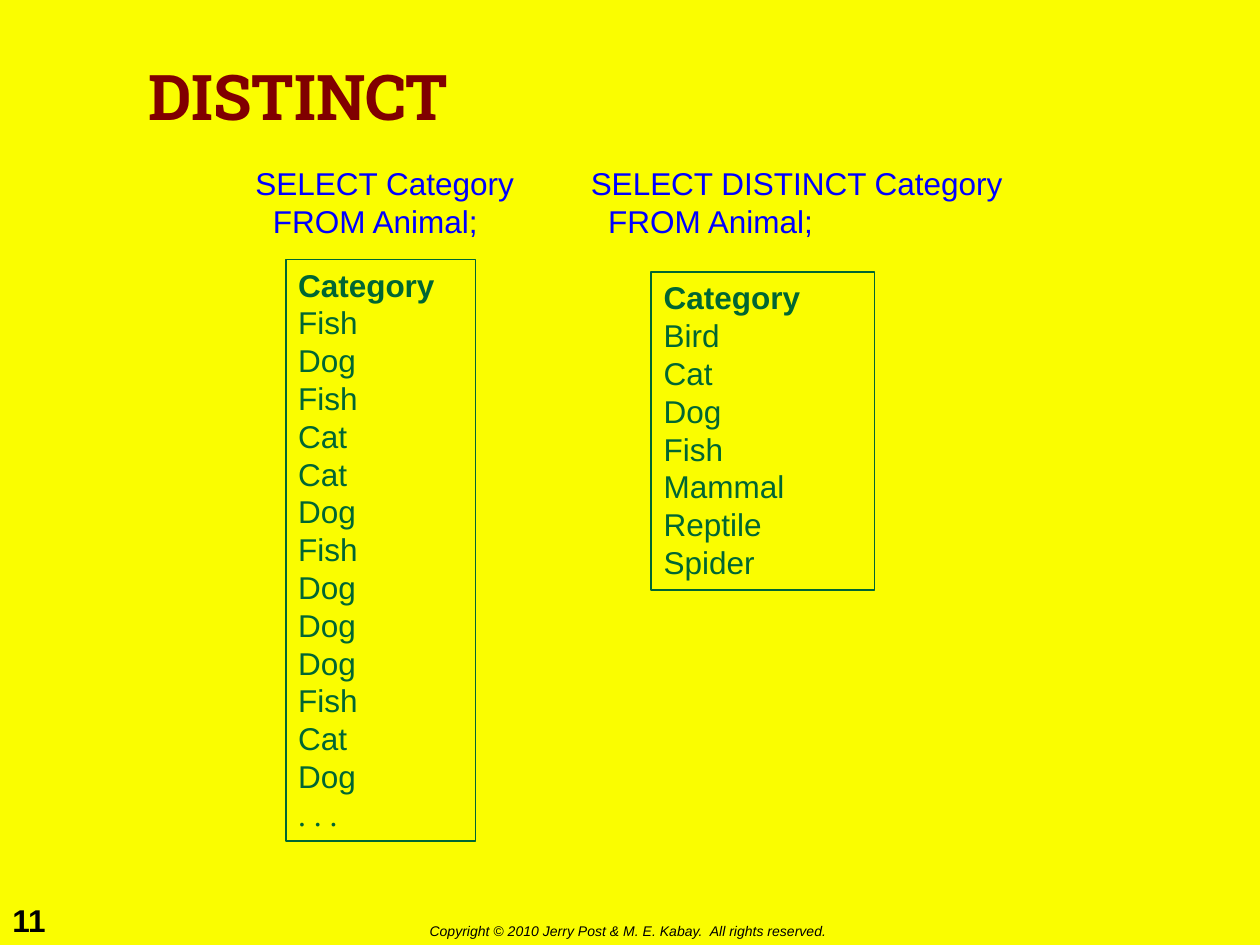
from dataclasses import dataclass

import pptx
import pptx.dml.color
import pptx.enum.shapes
import pptx.enum.text
import pptx.util
from pptx.util import Cm


@dataclass(frozen=True)
class Theme:
    background: str = "FAFD00"
    title: str = "800000"
    query: str = "0000FF"
    result: str = "006633"
    footer: str = "000000"
    title_font: str = "Roboto Slab"
    body_font: str = "Arial"
    ellipsis_font: str = "Times New Roman"
    title_size: int = 36
    body_size: int = 18
    footer_size: int = 8
    border_width: int = 1


@dataclass(frozen=True)
class Frame:
    left: float
    top: float
    width: float
    height: float

    def lengths(self) -> tuple:
        return Cm(self.left), Cm(self.top), Cm(self.width), Cm(self.height)


@dataclass(frozen=True)
class Style:
    font: str
    size: int
    color: str
    bold: bool = False
    italic: bool = False


@dataclass(frozen=True)
class Example:
    query: list[str]
    query_frame: Frame
    rows: list[str]
    result_frame: Frame


THEME = Theme()
ELLIPSIS = ". . ."
TITLE = Style(THEME.title_font, THEME.title_size, THEME.title, bold=True)
NUMBER = Style(THEME.body_font, THEME.body_size, THEME.footer, bold=True)
COPYRIGHT = Style(THEME.body_font, THEME.footer_size, THEME.footer, italic=True)
QUERY = Style(THEME.body_font, THEME.body_size, THEME.query)
HEADER = Style(THEME.body_font, THEME.body_size, THEME.result, bold=True)
ROW = Style(THEME.body_font, THEME.body_size, THEME.result)
MORE = Style(THEME.ellipsis_font, THEME.body_size, THEME.result)

EXAMPLES = [
    Example(
        ["SELECT Category", "  FROM Animal;"],
        Frame(4.9, 3.18, 5.74, 1.78),
        ["Fish", "Dog", "Fish", "Cat", "Cat", "Dog", "Fish", "Dog",
         "Dog", "Dog", "Fish", "Cat", "Dog", ELLIPSIS],
        Frame(5.76, 5.23, 3.83, 11.73),
    ),
    Example(
        ["SELECT DISTINCT Category", "  FROM Animal;"],
        Frame(11.66, 3.18, 8.84, 1.78),
        ["Bird", "Cat", "Dog", "Fish", "Mammal", "Reptile", "Spider"],
        Frame(13.13, 5.49, 4.5, 6.4),
    ),
]


def rgb(color: str) -> pptx.dml.color.RGBColor:
    return pptx.dml.color.RGBColor.from_string(color)


def write(box, lines: list[tuple[str, Style]], wrap: bool = False,
          anchor=pptx.enum.text.MSO_ANCHOR.TOP) -> None:
    frame = box.text_frame
    frame.word_wrap = wrap
    frame.vertical_anchor = anchor
    for index, (text, style) in enumerate(lines):
        para = frame.paragraphs[0] if index == 0 else frame.add_paragraph()
        para.text = text
        para.alignment = pptx.enum.text.PP_ALIGN.LEFT
        para.font.name = style.font
        para.font.size = pptx.util.Pt(style.size)
        para.font.bold = style.bold
        para.font.italic = style.italic
        para.font.color.rgb = rgb(style.color)


def add_label(slide, frame: Frame, lines: list[str], style: Style) -> None:
    box = slide.shapes.add_textbox(*frame.lengths())
    write(box, [(line, style) for line in lines])


def add_title(slide, text: str) -> None:
    box = slide.shapes.add_textbox(*Frame(2.74, 0.43, 19.89, 3.18).lengths())
    write(box, [(text, TITLE)], wrap=True, anchor=pptx.enum.text.MSO_ANCHOR.MIDDLE)
    box.text_frame.paragraphs[0].line_spacing = 0.9


def add_result(slide, frame: Frame, rows: list[str]) -> None:
    box = slide.shapes.add_shape(
        pptx.enum.shapes.MSO_SHAPE.RECTANGLE, *frame.lengths())
    box.shadow.inherit = False
    box.fill.background()
    box.line.color.rgb = rgb(THEME.result)
    box.line.width = pptx.util.Pt(THEME.border_width)
    body = [(row, MORE if row == ELLIPSIS else ROW) for row in rows]
    write(box, [("Category", HEADER), *body], wrap=True)


def main() -> None:
    deck = pptx.Presentation()
    deck.slide_width, deck.slide_height = Cm(25.4), Cm(19.05)
    slide = deck.slides.add_slide(deck.slide_layouts[6])
    slide.background.fill.solid()
    slide.background.fill.fore_color.rgb = rgb(THEME.background)

    add_label(slide, Frame(0, 18.03, 1.27, 1.02), ["11"], NUMBER)
    add_label(slide, Frame(8.41, 18.47, 8.79, 0.61),
              ["Copyright © 2010 Jerry Post & M. E. Kabay.  All rights reserved."],
              COPYRIGHT)
    add_title(slide, "DISTINCT")
    for example in EXAMPLES:
        add_label(slide, example.query_frame, example.query, QUERY)
        add_result(slide, example.result_frame, example.rows)
    deck.save("out.pptx")


if __name__ == "__main__":
    main()
